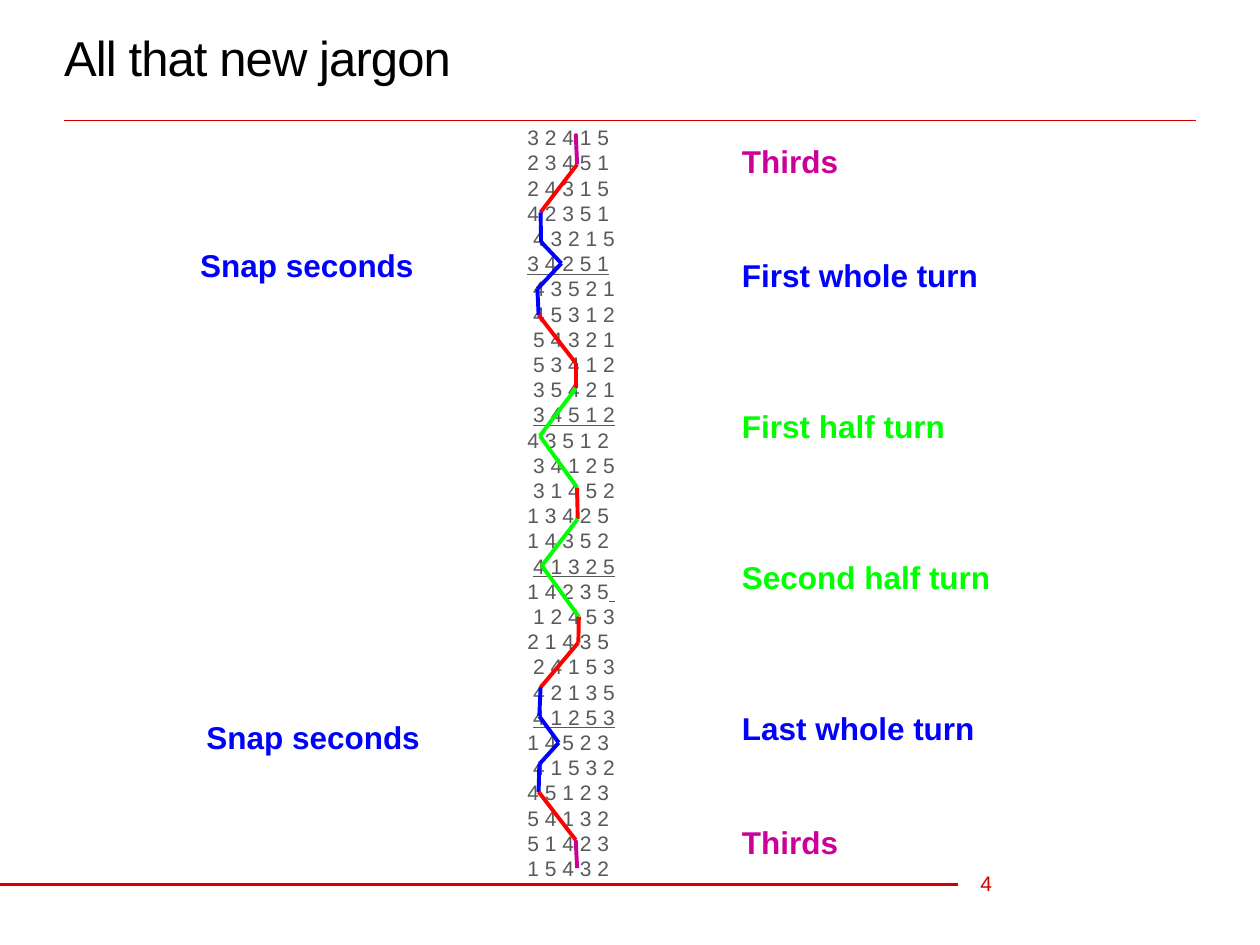
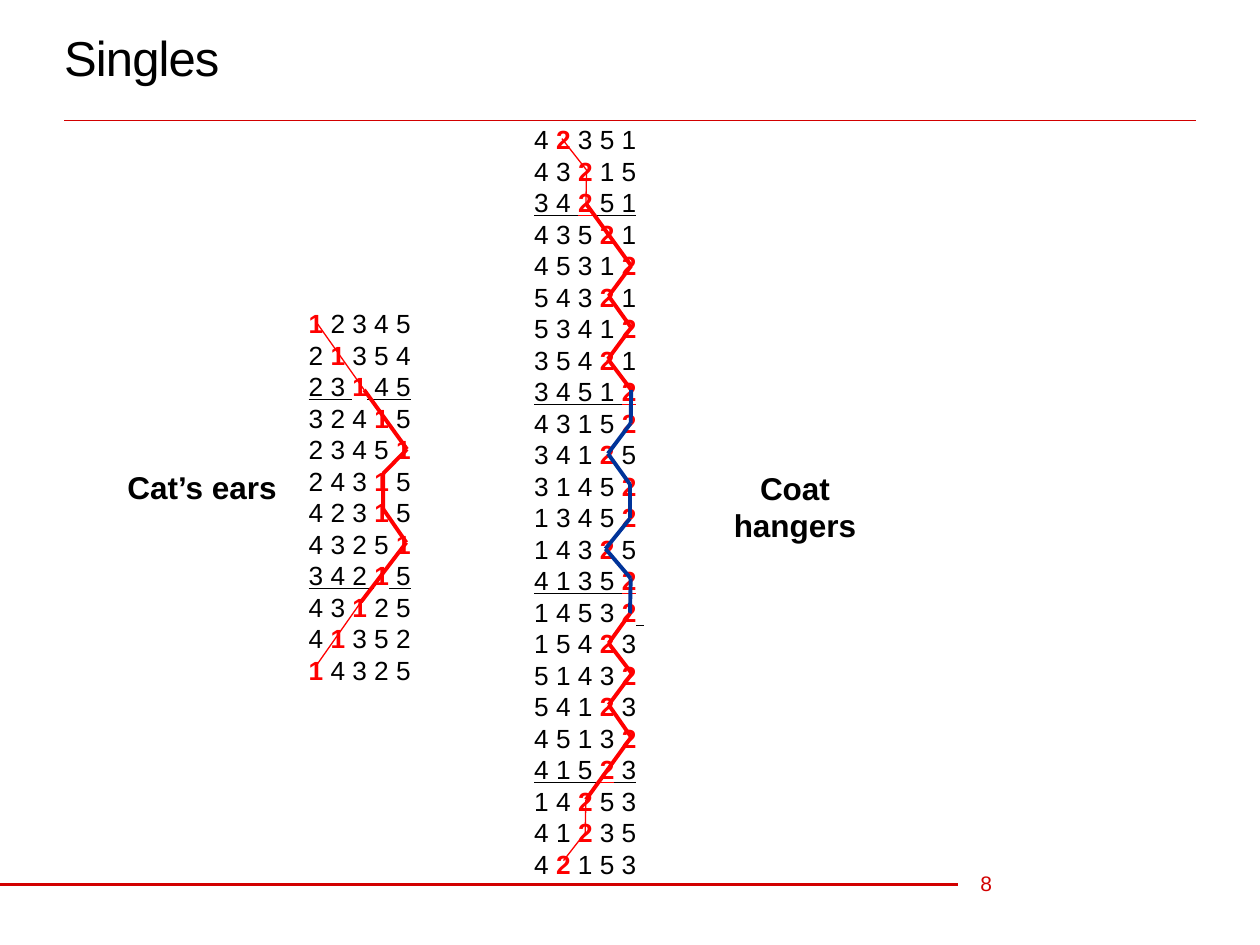
from dataclasses import dataclass
from typing import NamedTuple

from lxml.etree import SubElement
from pptx import Presentation
from pptx.dml.color import RGBColor as RGB
from pptx.enum.shapes import MSO_CONNECTOR as Link
from pptx.enum.text import MSO_ANCHOR as Anchor
from pptx.enum.text import MSO_AUTO_SIZE as Fit
from pptx.enum.text import PP_ALIGN as Align
from pptx.oxml.ns import qn
from pptx.util import Pt


# Theme: colours and type sizes
@dataclass(frozen=True)
class Theme:
    font: str = "Arial"
    black: str = "000000"
    grey: str = "58595B"
    brand: str = "D20000"
    red: str = "FF0000"
    blue: str = "0000FF"
    navy: str = "003399"
    green: str = "00FF00"
    pink: str = "CC0099"
    title: float = 28
    label: float = 18
    bells: float = 15
    small: float = 12
    leading: float = 1.2
    thick: float = 2.25
    thin: float = 0.75


T = Theme()


# Parts of a slide; all lengths in points
class Box(NamedTuple):
    left: float
    top: float
    width: float
    height: float


class Line(NamedTuple):
    text: str
    tint: str
    blanks: int = 0  # empty lines left above


class Label(NamedTuple):
    box: Box
    lines: list[Line]
    align: Align = Align.LEFT


class Rows(NamedTuple):
    """Rows of changes; text between underscores is underlined."""
    box: Box
    rows: list[str]
    size: float
    tint: str
    bell: str = ""  # the bell to pick out in bold red
    align: Align = Align.LEFT


class Leg(NamedTuple):
    tint: str
    points: list[tuple[float, float]]
    width: float = T.thick


class Trail(NamedTuple):
    """The path of one bell; each leg goes on from the one before."""
    start: tuple[float, float]
    legs: list[Leg]


class Page(NamedTuple):
    title: str
    number: str
    rows: list[Rows]
    labels: list[Label]
    trails: list[Trail]


# Drawing
def add_run(para, text: str, size: float, tint: str,
            bold: bool = False, under: bool = False):
    run = para.add_run()
    run.text = text
    font = run.font
    font.name, font.size, font.bold = T.font, Pt(size), bold
    font.color.rgb = RGB.from_string(tint)
    if under:
        font.underline = True
    return run


def set_frame(frame, inset: bool = False, anchor: Anchor = Anchor.TOP) -> None:
    frame.word_wrap = True
    frame.auto_size = Fit.NONE
    frame.vertical_anchor = anchor
    if not inset:
        frame.margin_left = frame.margin_right = Pt(0)
        frame.margin_top = frame.margin_bottom = Pt(0)


def add_box(slide, box: Box, inset: bool = False, anchor: Anchor = Anchor.TOP):
    frame = slide.shapes.add_textbox(*map(Pt, box)).text_frame
    set_frame(frame, inset, anchor)
    return frame


def add_line(slide, start: tuple, end: tuple, tint: str, width: float) -> None:
    line = slide.shapes.add_connector(Link.STRAIGHT, *map(Pt, (*start, *end)))
    line.line.color.rgb = RGB.from_string(tint)
    line.line.width = Pt(width)
    SubElement(line._element.spPr, qn("a:effectLst"))


def add_rows(slide, block: Rows) -> None:
    para = add_box(slide, block.box).paragraphs[0]
    para.alignment = block.align
    para.line_spacing = Pt(block.size * T.leading)
    for i, row in enumerate(block.rows):
        if i:
            para.add_line_break()
        for j, part in enumerate(row.split("_")):
            bits = part.partition(block.bell) if block.bell else (part,)
            for bit in filter(None, bits):
                hot = bit == block.bell
                add_run(para, bit, block.size, T.red if hot else block.tint,
                        hot, j % 2 == 1)


def add_label(slide, label: Label) -> None:
    frame = add_box(slide, label.box, inset=True)
    pitch = T.label * T.leading
    for i, line in enumerate(label.lines):
        para = frame.add_paragraph() if i else frame.paragraphs[0]
        para.alignment = label.align
        para.line_spacing = Pt(pitch)
        if line.blanks:
            para.space_before = Pt(line.blanks * pitch)
        add_run(para, line.text, T.label, line.tint, bold=True)


def add_trail(slide, trail: Trail) -> None:
    here = trail.start
    for leg in trail.legs:
        for point in leg.points:
            add_line(slide, here, point, leg.tint, leg.width)
            here = point


def add_base(slide, title: str, number: str) -> None:
    # Rules and page number
    add_line(slide, (36.7, 69.1), (683.3, 69.1), T.brand, 0.5)
    add_line(slide, (0, 505.4), (547.2, 505.4), T.brand, 2)
    foot = add_box(slide, Box(560.2, 490.3, 36.7, 28.8), anchor=Anchor.MIDDLE)
    add_run(foot.paragraphs[0], number, T.small, T.brand)
    # Title
    head = slide.shapes.title
    head.left, head.top, head.width, head.height = map(
        Pt, Box(36.7, 3.6, 646.6, 58.3))
    set_frame(head.text_frame, anchor=Anchor.MIDDLE)
    para = head.text_frame.paragraphs[0]
    para.alignment = Align.LEFT
    run = add_run(para, title, T.title, T.black)
    run.font._element.set("spc", "-50")


def add_page(deck, page: Page) -> None:
    slide = deck.slides.add_slide(deck.slide_layouts[5])
    add_base(slide, page.title, page.number)
    for block in page.rows:
        add_rows(slide, block)
    for label in page.labels:
        add_label(slide, label)
    for trail in page.trails:
        add_trail(slide, trail)


# Slide content: the jargon
SNAP = [Line("Snap seconds", T.blue)]
JARGON = Page(
    "All that new jargon", "4",
    [Rows(Box(34.6, 71.3, 316.8, 434), [
        "3 2 4 1 5 ", "2 3 4 5 1 ", "2 4 3 1 5 ", "4 2 3 5 1 ", "4 3 2 1 5",
        "_3 4 2 5 1_ ", "4 3 5 2 1", "4 5 3 1 2", "5 4 3 2 1", "5 3 4 1 2",
        "3 5 4 2 1", "_3 4 5 1 2_", "4 3 5 1 2 ", "3 4 1 2 5", "3 1 4 5 2",
        "1 3 4 2 5 ", "1 4 3 5 2 ", "_4 1 3 2 5_", "1 4 2 3 5_ _",
        "1 2 4 5 3", "2 1 4 3 5 ", "2 4 1 5 3", "4 2 1 3 5", "_4 1 2 5 3_",
        "1 4 5 2 3 ", "4 1 5 3 2", "4 5 1 2 3 ", "5 4 1 3 2 ", "5 1 4 2 3 ",
        "1 5 4 3 2 ",
    ], T.small, T.grey, align=Align.RIGHT)],
    [Label(Box(416.9, 77.8, 239, 418.3), [
        Line("Thirds", T.pink),
        Line("First whole turn", T.blue, 2),
        Line("First half turn", T.green, 3),
        Line("Second half turn", T.green, 3),
        Line("Last whole turn", T.blue, 3),
        Line("Thirds", T.pink, 2)]),
     Label(Box(107.3, 136.8, 141.1, 28.8), SNAP),
     Label(Box(110.9, 406.8, 141.1, 28.8), SNAP)],
    [Trail((329, 76.3), [
        Leg(T.pink, [(329.8, 94)]),
        Leg(T.red, [(308.9, 121.3)]),
        Leg(T.blue, [(309.2, 138.2), (320.8, 150.5), (307.1, 165.2),
                     (307.8, 180)]),
        Leg(T.red, [(329, 207.5), (329, 222)]),
        Leg(T.green, [(308.5, 249.1), (329.8, 278.6)]),
        Leg(T.red, [(330.1, 296.6)]),
        Leg(T.green, [(309.6, 323.3), (330.8, 352.4)]),
        Leg(T.red, [(330.5, 367.2), (308.9, 392.8)]),
        Leg(T.blue, [(308.2, 409.3), (319.3, 424.4), (308.2, 436.7),
                     (307.8, 452.5)]),
        Leg(T.red, [(329, 480)]),
        Leg(T.pink, [(329.8, 496.1)])])])

# Slide content: the singles
SINGLES = Page(
    "Singles", "8",
    [Rows(Box(176.4, 175.7, 148.3, 246), [
        "1 2 3 4 5", "2 1 3 5 4", "_2 3 _1_ 4 5_", "3 2 4 1 5", "2 3 4 5 1",
        "2 4 3 1 5", "4 2 3 1 5", "4 3 2 5 1", "_3 4 2 _1_ 5_", "4 3 1 2 5",
        "4 1 3 5 2", "1 4 3 2 5",
    ], T.bells, T.black, "1"),
     Rows(Box(305.3, 70.6, 316.8, 432), [
        "4 2 3 5 1", "4 3 2 1 5", "_3 4 2 5 1_", "4 3 5 2 1", "4 5 3 1 2",
        "5 4 3 2 1", "5 3 4 1 2", "3 5 4 2 1", "_3 4 5 1 2_", "4 3 1 5 2",
        "3 4 1 2 5", "3 1 4 5 2", "1 3 4 5 2", "1 4 3 2 5", "_4 1 3 5 2_",
        "1 4 5 3 2_ _", "1 5 4 2 3", "5 1 4 3 2", "5 4 1 2 3", "4 5 1 3 2",
        "_4 1 5 2 3_", "1 4 2 5 3", "4 1 2 3 5", "4 2 1 5 3",
     ], T.bells, T.black, "2")],
    [Label(Box(55.4, 264.2, 120.2, 28.8),
           [Line("Cat’s ears", T.black)], Align.CENTER),
     Label(Box(390.2, 264.2, 128.2, 51.1),
           [Line("Coat hangers", T.black)], Align.CENTER)],
    [Trail((181.4, 185), [
        Leg(T.red, [(208.1, 222.8)], T.thin),
        Leg(T.red, [(232.6, 256.7), (218.9, 270.7), (219, 290.9),
                    (232.2, 310), (206.3, 344)]),
        Leg(T.red, [(181.4, 379.4)], T.thin)]),
     Trail((321.1, 79.2), [
        Leg(T.red, [(335.2, 97.2), (334.8, 116.3)], T.thin),
        Leg(T.red, [(360.7, 151.9), (347.8, 169.2), (360.7, 187.2),
                    (347.4, 205.2), (360.7, 222.8)]),
        Leg(T.navy, [(360.4, 241.9), (347.4, 259.2), (360, 276.8),
                     (360, 296.3), (346, 313.6), (360.4, 330.5),
                     (360, 350.6)]),
        Leg(T.red, [(347.8, 367.6), (361.1, 384.9), (347.8, 402.8),
                    (360.7, 421.2), (334.8, 457)]),
        Leg(T.red, [(334.4, 475.9), (322, 491.8)], T.thin)])])


def main() -> None:
    deck = Presentation()
    deck.slide_width, deck.slide_height = Pt(720), Pt(540)
    for page in (JARGON, SINGLES):
        add_page(deck, page)
    deck.save("out.pptx")


if __name__ == "__main__":
    main()
